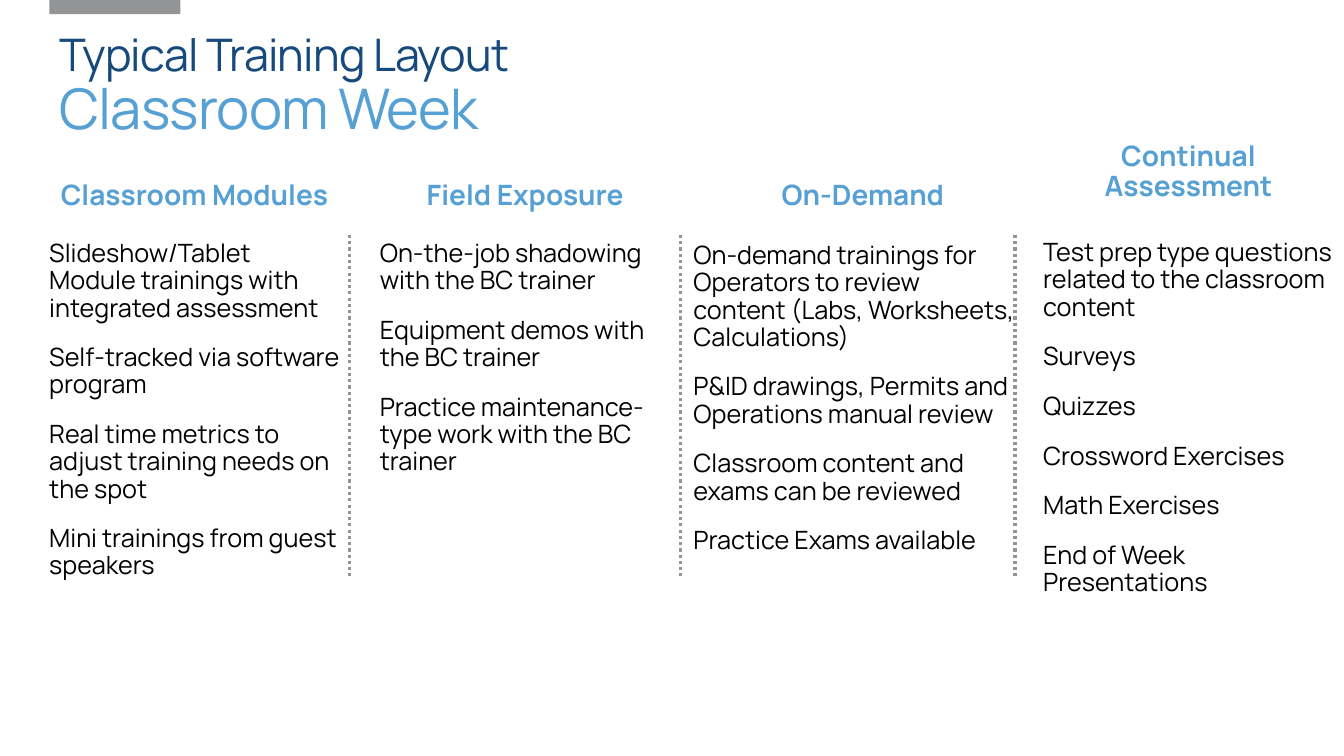
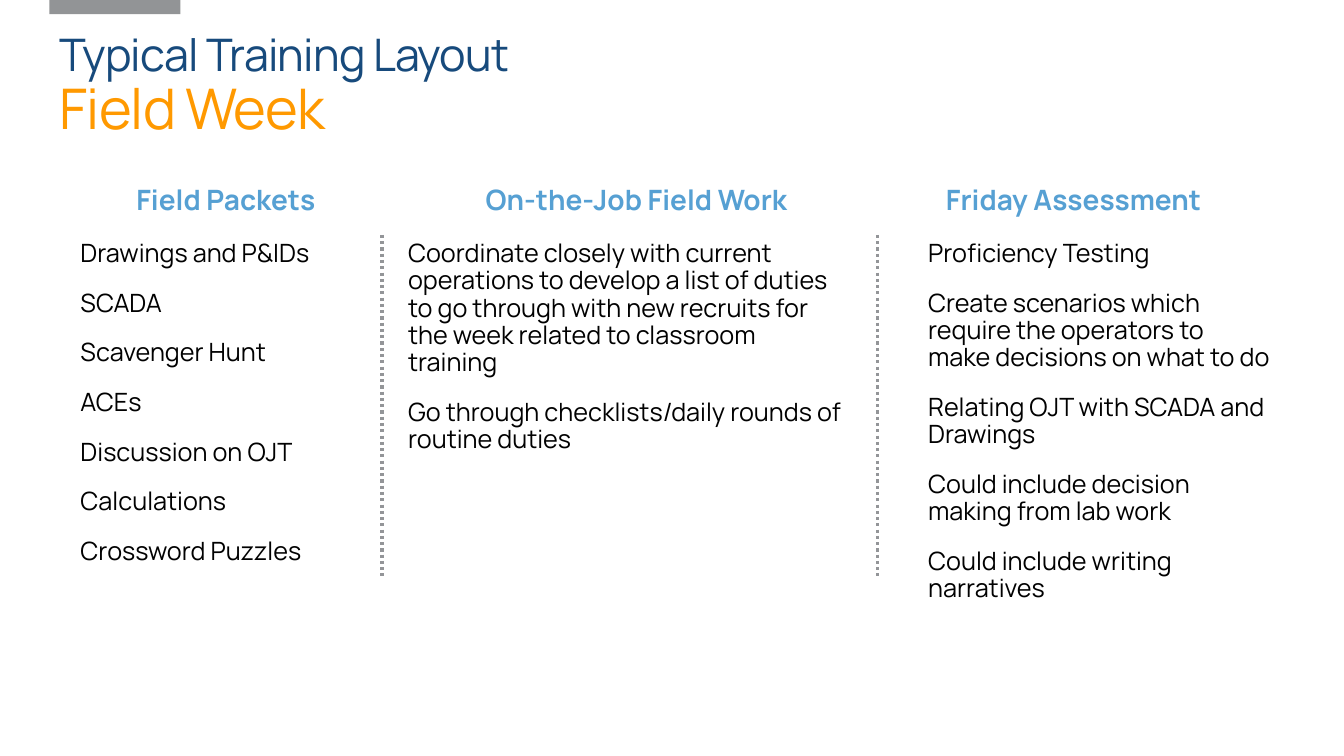
from dataclasses import dataclass

from lxml.etree import SubElement as Sub
from pptx import Presentation as Deck
from pptx.dml.color import RGBColor as Rgb
from pptx.enum.dml import MSO_LINE_DASH_STYLE as Dash
from pptx.enum.shapes import MSO_CONNECTOR as Link, MSO_SHAPE as Form
from pptx.enum.text import MSO_ANCHOR as Anchor, MSO_AUTO_SIZE as Fit, PP_ALIGN as Align
from pptx.oxml.ns import qn
from pptx.util import Pt


@dataclass(frozen=True)
class Theme:
    font: str = "Manrope"
    navy: str = "174A7C"
    blue: str = "56A0D3"
    gold: str = "FF9900"
    ink: str = "010101"
    band: str = "929496"
    rule: str = "939598"
    lead: int = 32
    topic: int = 40
    head: int = 20
    body: int = 18
    pitch: float = 0.9
    width: float = 221.8


class Pen:
    def __init__(self, theme):
        self.theme = theme
        self.deck = Deck()
        self.deck.slide_width, self.deck.slide_height = Pt(960), Pt(540)
        self.slide = None

    def start(self, topic, color):
        t = self.theme
        self.slide = self.deck.slides.add_slide(self.deck.slide_layouts[5])
        self.band()
        title = self.slide.shapes.title
        title.left, title.top = Pt(35.3), Pt(19.4)
        title.width, title.height = Pt(879.8), Pt(85.7)
        frame = title.text_frame
        frame.word_wrap = True
        frame.auto_size = Fit.NONE
        frame.vertical_anchor = Anchor.MIDDLE
        lines = [("Typical Training Layout", t.lead, t.navy), (topic, t.topic, color)]
        for i, (text, size, shade) in enumerate(lines):
            para = self.para(frame, i, Align.LEFT)
            run = self.run(para, text, size, shade)
            run.font._element.set("spc", "-60")

    def band(self):
        shape = self.slide.shapes.add_shape(Form.RECTANGLE, Pt(35.3), 0, Pt(93.6), Pt(10.1))
        shape.shadow.inherit = False
        shape.fill.solid()
        shape.fill.fore_color.rgb = Rgb.from_string(self.theme.band)
        shape.line.fill.background()

    def para(self, frame, i, align, before=0, after=0):
        para = frame.add_paragraph() if i else frame.paragraphs[0]
        para.alignment = align
        para.line_spacing = self.theme.pitch
        para.space_before = Pt(before if i else 0)
        para.space_after = Pt(after)
        return para

    def run(self, para, text, size, color, bold=False):
        run = para.add_run()
        run.text = text
        run.font.name = self.theme.font
        run.font.size = Pt(size)
        run.font.bold = bold
        run.font.color.rgb = Rgb.from_string(color)
        return run

    def frame(self, left, top, width, height):
        box = self.slide.shapes.add_textbox(Pt(left), Pt(top), Pt(width), Pt(height))
        box.text_frame.word_wrap = True
        return box.text_frame

    def head(self, text, left, top, width=Theme.width, height=26.6):
        frame = self.frame(left, top, width, height)
        para = self.para(frame, 0, Align.CENTER)
        self.run(para, text, self.theme.head, self.theme.blue, True)

    def body(self, items, left, top=168.5, width=Theme.width):
        frame = self.frame(left, top, width, 87.8)
        for i, text in enumerate(items):
            para = self.para(frame, i, Align.LEFT, 10, 6)
            self.run(para, text, self.theme.body, self.theme.ink)

    def rules(self, *spots):
        for x in spots:
            rule = self.slide.shapes.add_connector(
                Link.STRAIGHT, Pt(x), Pt(167.8), Pt(x), Pt(411.1))
            rule.line.color.rgb = Rgb.from_string(self.theme.rule)
            rule.line.width = Pt(2.25)
            rule.line.dash_style = Dash.ROUND_DOT
            Sub(rule._element.spPr, qn("a:effectLst"))


def class_week(pen):
    pen.start("Classroom Week", pen.theme.blue)
    pen.head("Classroom Modules", 28.1, 126)
    pen.head("Field Exposure", 264.2, 126)
    pen.head("On-Demand", 505.4, 126)
    pen.head("Continual Assessment", 738, 97.9, height=54)
    pen.body([
        "Slideshow/Tablet Module trainings with integrated assessment",
        "Self-tracked via software program",
        "Real time metrics to adjust training needs on the spot",
        "Mini trainings from guest speakers",
    ], 28.1)
    pen.body([
        "On-the-job shadowing with the BC trainer",
        "Equipment demos with the BC trainer",
        "Practice maintenance-type work with the BC trainer",
    ], 264.2)
    pen.body([
        "On-demand trainings for Operators to review content (Labs, Worksheets, Calculations)",
        "P&ID drawings, Permits and Operations manual review",
        "Classroom content and exams can be reviewed",
        "Practice Exams available",
    ], 488.2, 169.9, 243.4)
    pen.body([
        "Test prep type questions related to the classroom content",
        "Surveys",
        "Quizzes",
        "Crossword Exercises",
        "Math Exercises",
        "End of Week Presentations",
    ], 738, 167.8)
    pen.rules(249.8, 486, 725)


def field_week(pen):
    pen.start("Field Week", pen.theme.gold)
    pen.head("Field Packets", 50.4, 129.6)
    pen.head("On-the-Job Field Work", 331.9, 129.6, 245.5)
    pen.head("Friday Assessment", 655.9, 129.6)
    pen.body([
        "Drawings and P&IDs",
        "SCADA",
        "Scavenger Hunt",
        "ACEs",
        "Discussion on OJT",
        "Calculations",
        "Crossword Puzzles",
    ], 50.4)
    pen.body([
        "Coordinate closely with current operations to develop a list of duties "
        "to go through with new recruits for the week related to classroom training",
        "Go through checklists/daily rounds of routine duties",
    ], 284.4, width=325.4)
    pen.body([
        "Proficiency Testing",
        "Create scenarios which require the operators to make decisions on what to do",
        "Relating OJT with SCADA and Drawings",
        "Could include decision making from lab work",
        "Could include writing narratives",
    ], 655.9, width=259.2)
    pen.rules(272.9, 627.1)


def main():
    pen = Pen(Theme())
    class_week(pen)
    field_week(pen)
    pen.deck.save("out.pptx")


if __name__ == "__main__":
    main()
